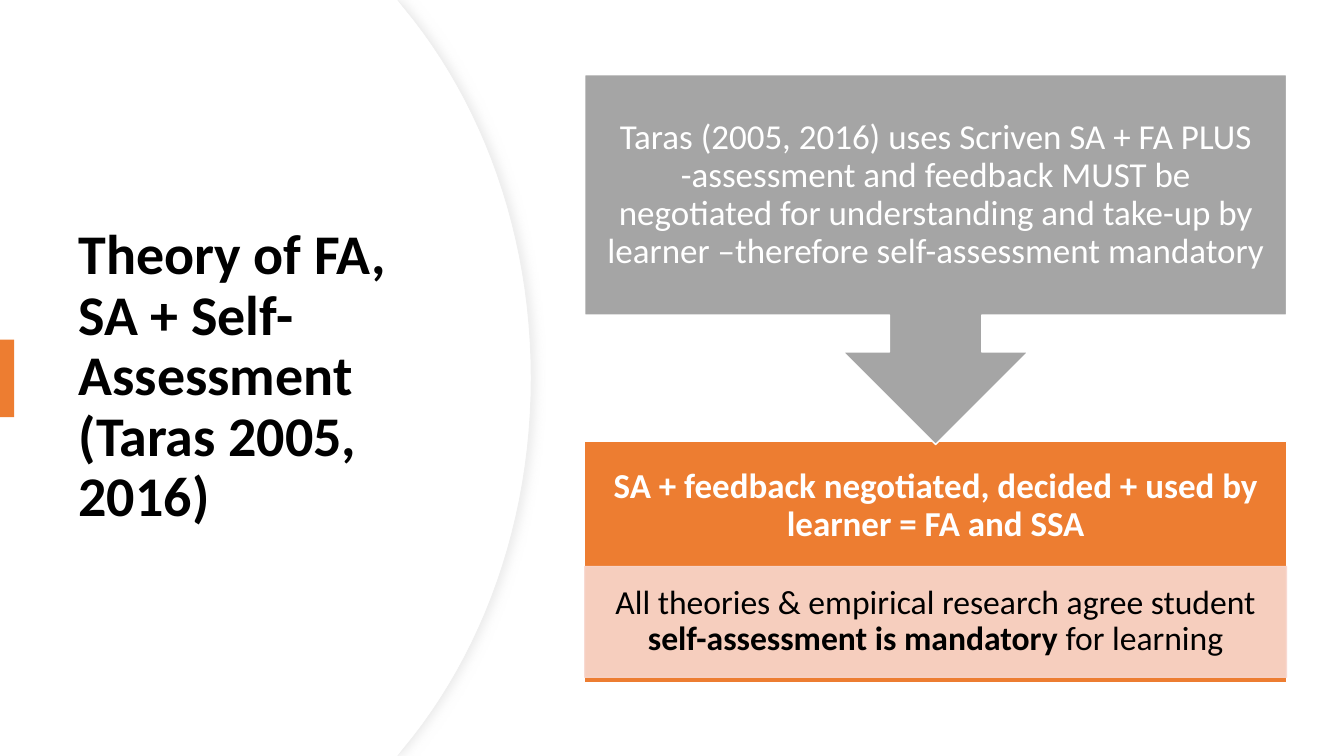
from dataclasses import dataclass

from lxml.etree import SubElement
from pptx import Presentation
from pptx.dml.color import RGBColor
from pptx.enum.shapes import MSO_SHAPE
from pptx.enum.text import MSO_ANCHOR, MSO_AUTO_SIZE, PP_ALIGN
from pptx.oxml.ns import qn
from pptx.util import Inches, Pt


@dataclass(frozen=True)
class Theme:
    font: str = "Calibri"
    white: str = "FFFFFF"
    black: str = "000000"
    orange: str = "ED7D31"
    pink: str = "F8D7CE"
    gray: str = "A5A5A5"
    edge: str = "EFEFEF"
    shadow: str = "D9D9D9"
    title: int = 40
    body: int = 25
    detail: int = 24


THEME = Theme()
SLIDE_W, SLIDE_H = 13.33, 7.5
FLOW_X, FLOW_W = 5.8, 6.96
CURVE_STEPS = 24


def write_text(sp, *runs, size, color=THEME.black, bold=False,
               align=PP_ALIGN.CENTER, inset=None):
    tf = sp.text_frame
    tf.word_wrap = True
    tf.auto_size = MSO_AUTO_SIZE.NONE
    tf.vertical_anchor = MSO_ANCHOR.MIDDLE
    if inset:
        tf.margin_left = tf.margin_right = Inches(inset[0])
        tf.margin_top = tf.margin_bottom = Inches(inset[1])
    p = tf.paragraphs[0]
    p.alignment = align
    p.line_spacing = 0.9
    for text, strong in runs:
        r = p.add_run()
        r.text = text
        r.font.name = THEME.font
        r.font.size = Pt(size)
        r.font.bold = bold or strong
        r.font.color.rgb = RGBColor.from_string(color)


def paint(sp, fill, line=None, width=1, opacity=None):
    sp.shadow.inherit = False
    sp.fill.solid()
    sp.fill.fore_color.rgb = RGBColor.from_string(fill)
    if line:
        sp.line.color.rgb = RGBColor.from_string(line)
        sp.line.width = Pt(width)
    else:
        sp.line.fill.background()
    if opacity:
        for color in list(sp._element.spPr.iter(qn("a:srgbClr"))):
            SubElement(color, qn("a:alpha"), val=str(opacity * 1000))


def add_box(s, kind, x, y, w, h, fill, **style):
    sp = s.shapes.add_shape(kind, Inches(x), Inches(y), Inches(w), Inches(h))
    paint(sp, fill, **style)
    return sp


def add_label(s, y, h, text, **style):
    sp = s.shapes.add_textbox(Inches(FLOW_X), Inches(y), Inches(FLOW_W), Inches(h))
    write_text(sp, (text, False), size=THEME.body, color=THEME.white,
               inset=(0.19, 0.19), **style)


def bezier(points):
    a, b, c, d = points
    for i in range(1, CURVE_STEPS + 1):
        t = i / CURVE_STEPS
        u = 1 - t
        yield tuple(u**3 * a[k] + 3 * u**2 * t * b[k] + 3 * u * t**2 * c[k] + t**3 * d[k]
                    for k in (0, 1))


def add_curved_panel(s, right, line=None):
    shoulder, control = right - 1.26, right - 0.48
    middle = SLIDE_H / 2
    upper = [(shoulder, 0.08), (control, 1.02), (right, 2.32), (right, middle)]
    lower = [(x, SLIDE_H - y) for x, y in reversed(upper)]
    outline = [(3.94, 0), upper[0], *bezier(upper), *bezier(lower),
               (3.94, SLIDE_H), (0, SLIDE_H)]
    builder = s.shapes.build_freeform(0, 0)
    builder.add_line_segments([(Inches(x), Inches(y)) for x, y in outline])
    sp = builder.convert_to_shape()
    paint(sp, THEME.white, line=line, width=0.75)
    return sp


def add_shadow(sp):
    effects = sp._element.spPr.find(qn("a:effectLst"))
    outer = SubElement(effects, qn("a:outerShdw"), blurRad=str(Pt(7)),
                       dist=str(Pt(3)), dir="0", algn="l", rotWithShape="0")
    color = SubElement(outer, qn("a:srgbClr"), val=THEME.shadow)
    SubElement(color, qn("a:alpha"), val="50000")


def place_title(s, text):
    title = s.shapes.title
    title.left, title.top = Inches(0.68), Inches(1.27)
    title.width, title.height = Inches(3.94), Inches(4.95)
    write_text(title, (text, True), size=THEME.title, align=PP_ALIGN.LEFT)
    s.shapes._spTree.append(title._element)


def add_conclusion(s):
    add_box(s, MSO_SHAPE.RECTANGLE, FLOW_X, 4.38, FLOW_W, 2.39,
            THEME.orange, line=THEME.white)
    add_label(s, 4.38, 1.29,
              "SA + feedback negotiated, decided + used by learner = FA and SSA", bold=True)
    detail = add_box(s, MSO_SHAPE.RECTANGLE, FLOW_X, 5.62, FLOW_W, 1.1,
                     THEME.pink, line=THEME.pink, opacity=90)
    write_text(detail,
               ("All theories & empirical research agree student ", False),
               ("self-assessment is mandatory ", True),
               ("for learning", False),
               size=THEME.detail, inset=(0.19, 0.03))


def add_premise(s):
    callout = add_box(s, MSO_SHAPE.UP_ARROW_CALLOUT, FLOW_X, 0.74, FLOW_W, 3.67,
                      THEME.gray, line=THEME.white)
    callout.rotation = 180
    add_label(s, 0.74, 2.39,
              "Taras (2005, 2016) uses Scriven SA + FA PLUS -assessment and feedback "
              "MUST be negotiated for understanding and take-up by learner "
              "–therefore self-assessment mandatory")


def main():
    prs = Presentation()
    prs.slide_width, prs.slide_height = Inches(SLIDE_W), Inches(SLIDE_H)
    s = prs.slides.add_slide(prs.slide_layouts[5])
    add_shadow(add_curved_panel(s, 5.27, line=THEME.edge))
    add_curved_panel(s, 5.26)
    place_title(s, "Theory of FA, SA + Self-Assessment (Taras 2005, 2016)")
    add_box(s, MSO_SHAPE.RECTANGLE, 0, 3.37, 0.14, 0.77, THEME.orange)
    add_conclusion(s)
    add_premise(s)
    prs.save("out.pptx")


if __name__ == "__main__":
    main()
